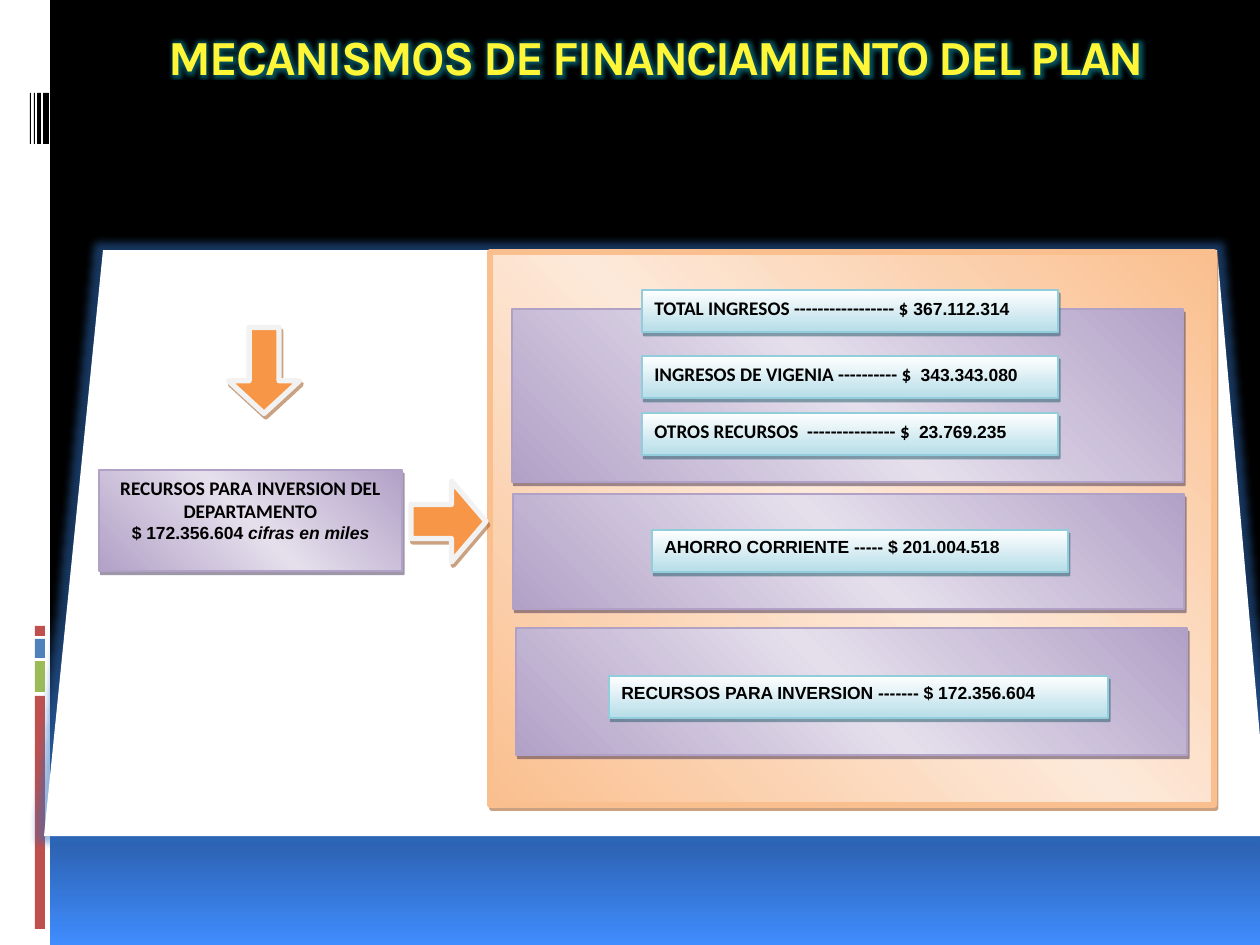
from pptx import Presentation
from pptx.dml.color import RGBColor
from pptx.enum.shapes import MSO_SHAPE
from pptx.enum.text import MSO_ANCHOR, PP_ALIGN
from pptx.oxml import parse_xml
from pptx.oxml.ns import nsdecls, qn
from pptx.util import Emu, Pt

RECT, ARROW = MSO_SHAPE.RECTANGLE, MSO_SHAPE.RIGHT_ARROW
TOP, LEFT, CENTER = MSO_ANCHOR.TOP, PP_ALIGN.LEFT, PP_ALIGN.CENTER

BLACK = RGBColor(0x00, 0x00, 0x00)
WHITE = RGBColor(0xFF, 0xFF, 0xFF)
YELLOW = RGBColor(0xFF, 0xF6, 0x37)
TEAL = RGBColor(0x0B, 0x75, 0x85)
SKY = RGBColor(0x40, 0x8D, 0xFF)
RED = RGBColor(0xC0, 0x50, 0x4D)
GREEN = RGBColor(0x9B, 0xBB, 0x59)
BLUE = RGBColor(0x4F, 0x81, 0xBD)
GLOW_BLUE = RGBColor(0x2F, 0x6F, 0xC0)
ORANGE = RGBColor(0xF7, 0x96, 0x46)
PEACH = RGBColor(0xFA, 0xBF, 0x8F)
PALE_PEACH = RGBColor(0xFD, 0xE9, 0xD9)
BROWN = RGBColor(0x97, 0x47, 0x06)
LILAC = RGBColor(0xB2, 0xA1, 0xC7)
PALE_LILAC = RGBColor(0xE5, 0xDF, 0xEC)
PLUM = RGBColor(0x3F, 0x31, 0x51)
AQUA = RGBColor(0xB6, 0xDD, 0xE8)
AQUA_LINE = RGBColor(0x92, 0xCD, 0xDC)
DEEP_AQUA = RGBColor(0x20, 0x58, 0x67)
GREY = RGBColor(0xF2, 0xF2, 0xF2)

PEACH_BAND = ((0, PEACH), (50, PALE_PEACH), (100, PEACH))
LILAC_BAND = ((0, LILAC), (50, PALE_LILAC), (100, LILAC))
AQUA_FADE = ((0, WHITE), (100, AQUA))
SCALE = 914400 / 126


def px(n):
    return Emu(round(n * SCALE))


def set_gradient(fill, parent, stops, angle):
    """Fill with (percent, colour) stops; the angle turns clockwise."""
    fill.gradient()
    grad = parent.find(qn("a:gradFill"))
    gs = "".join(f'<a:gs pos="{pos * 1000}"><a:srgbClr val="{c}"/></a:gs>'
                 for pos, c in stops)
    grad.replace(grad.find(qn("a:gsLst")),
                 parse_xml(f'<a:gsLst {nsdecls("a")}>{gs}</a:gsLst>'))
    grad.find(qn("a:lin")).set("ang", str(angle * 60000))


def glow_xml(color, radius, alpha):
    return parse_xml(f'<a:glow {nsdecls("a")} rad="{Pt(radius)}"><a:srgbClr val="{color}">'
                     f'<a:alpha val="{alpha * 1000}"/></a:srgbClr></a:glow>')


def shadow_xml(color):
    return parse_xml(f'<a:outerShdw {nsdecls("a")} blurRad="0" dist="{Pt(2.2)}" '
                     f'dir="{63 * 60000}" algn="ctr" rotWithShape="0">'
                     f'<a:srgbClr val="{color}"><a:alpha val="50000"/></a:srgbClr>'
                     '</a:outerShdw>')


def style(sp, fill, line=None, width=1, effect=None, angle=315):
    if isinstance(fill, RGBColor):
        sp.fill.solid()
        sp.fill.fore_color.rgb = fill
    else:
        set_gradient(sp.fill, sp._element.spPr, fill, angle)
    if line is None:
        sp.line.fill.background()
    else:
        sp.line.color.rgb = line
        sp.line.width = Pt(width)
    sp.shadow.inherit = False
    if effect is not None:
        sp._element.spPr.find(qn("a:effectLst")).append(effect)


def add_box(s, kind, box, *args, **kwargs):
    sp = s.shapes.add_shape(kind, *map(px, box))
    style(sp, *args, **kwargs)
    return sp


def add_runs(p, runs, align):
    """Each run is (text, font, size, italic)."""
    p.alignment = align
    for text, font, size, italic in runs:
        r = p.add_run()
        r.text = text
        r.font.name, r.font.size = font, Pt(size)
        r.font.bold, r.font.italic = True, italic
        r.font.color.rgb = BLACK


def add_side_strip(s, x, y, h):
    add_box(s, RECT, (x, y, 50, h), WHITE)
    for top, height, color in ((696, 233, RED), (661, 31, GREEN),
                               (639, 19, BLUE), (626, 10, RED)):
        add_box(s, RECT, (x + 35, y + top, 10, height), color)
    for left, width in ((43, 6), (37, 4), (34, 1), (30, 1)):
        add_box(s, RECT, (x + left, y + 93, width, 51), BLACK)


def add_title(s, box):
    title = s.shapes.title
    title.left, title.top, title.width, title.height = map(px, box)
    tf = title.text_frame
    tf.text = "MECANISMOS DE FINANCIAMIENTO DEL PLAN "
    tf.word_wrap, tf.vertical_anchor = True, TOP
    p = tf.paragraphs[0]
    p.alignment = CENTER
    font = p.runs[0].font
    font.name, font.size, font.bold = "Karla", Pt(28), True
    font.color.rgb = YELLOW
    rpr = p.runs[0]._r.get_or_add_rPr()
    rpr.set("spc", "-100")
    effects = parse_xml(f'<a:effectLst {nsdecls("a")}/>')
    effects.append(glow_xml(TEAL, 5, 70))
    rpr.find(qn("a:solidFill")).addnext(effects)


def add_backdrop(s, x, y, w, h):
    """White sheet with slanted sides, cut at the slide's right edge."""
    fb = s.shapes.build_freeform(x + 59, y, scale=SCALE)
    fb.add_line_segments([(x + w - 43, y), (x + w, y + 487),
                          (x + w, y + h), (x, y + h)])
    style(fb.convert_to_shape(), WHITE, effect=glow_xml(GLOW_BLUE, 9, 50))


def add_panel(s, box):
    return add_box(s, RECT, box, LILAC_BAND, LILAC, effect=shadow_xml(PLUM))


def add_label(s, x, y, w, runs):
    sp = add_box(s, RECT, (x, y, w, 42), AQUA_FADE, AQUA_LINE,
                 effect=shadow_xml(DEEP_AQUA), angle=90)
    tf = sp.text_frame
    tf.word_wrap, tf.vertical_anchor = True, TOP
    add_runs(tf.paragraphs[0], runs, LEFT)
    tf.paragraphs[0].space_after = Pt(10)


def add_arrow(s, box, rotation=0):
    sp = add_box(s, ARROW, box, ORANGE, GREY, 3, shadow_xml(BROWN))
    sp.adjustments[0], sp.adjustments[1] = 0.42, 0.46
    sp.rotation = rotation


def add_source(s, x, y):
    add_arrow(s, (x + 122, y, 86, 71), 90)
    sp = add_panel(s, (x, y + 135, 303, 101))
    tf = sp.text_frame
    tf.word_wrap, tf.vertical_anchor = True, TOP
    add_runs(tf.paragraphs[0],
             [("RECURSOS PARA INVERSION DEL DEPARTAMENTO", "Calibri", 11, False)], CENTER)
    add_runs(tf.add_paragraph(), [("$ 172.356.604 ", "Arial", 10, False),
                                  ("cifras en miles", "Arial", 10, True)], CENTER)


def add_breakdown(s, x, y, w, h):
    add_box(s, RECT, (x, y, w, h), PEACH_BAND, PEACH, 3, shadow_xml(BROWN))
    for left, top, height in ((22, 57, 173), (23, 242, 115), (26, 376, 127)):
        add_panel(s, (x + left, y + top, 671, height))
    for top, text, amount in (
            (38, "TOTAL INGRESOS ----------------- $ ", "367.112.314"),
            (104, "INGRESOS DE VIGENIA ---------- $  ", "343.343.080"),
            (161, "OTROS RECURSOS  --------------- $  ", "23.769.235")):
        add_label(s, x + 152, y + top, 416, [(text, "Calibri", 11, False),
                                             (amount, "Arial", 10, False)])
    for left, top, width, text in (
            (162, 278, 416, "AHORRO CORRIENTE ----- $ 201.004.518"),
            (119, 424, 499, "RECURSOS PARA INVERSION ------- $ 172.356.604")):
        add_label(s, x + left, y + top, width, [(text, "Arial", 10, False)])


def main():
    prs = Presentation()
    prs.slide_width, prs.slide_height = px(1260), px(945)
    s = prs.slides.add_slide(prs.slide_layouts[5])
    fill = s.background.fill
    fill.solid()
    set_gradient(fill, s._element.cSld.bg.bgPr,
                 ((0, BLACK), (65, BLACK), (100, SKY)), 90)
    add_side_strip(s, 0, 0, 945)
    add_title(s, (126, 20, 1071, 126))
    add_backdrop(s, 44, 250, 1216, 586)
    add_breakdown(s, 490, 252, 724, 553)
    add_source(s, 99, 335)
    add_arrow(s, (411, 481, 75, 81))
    prs.save("out.pptx")


if __name__ == "__main__":
    main()
